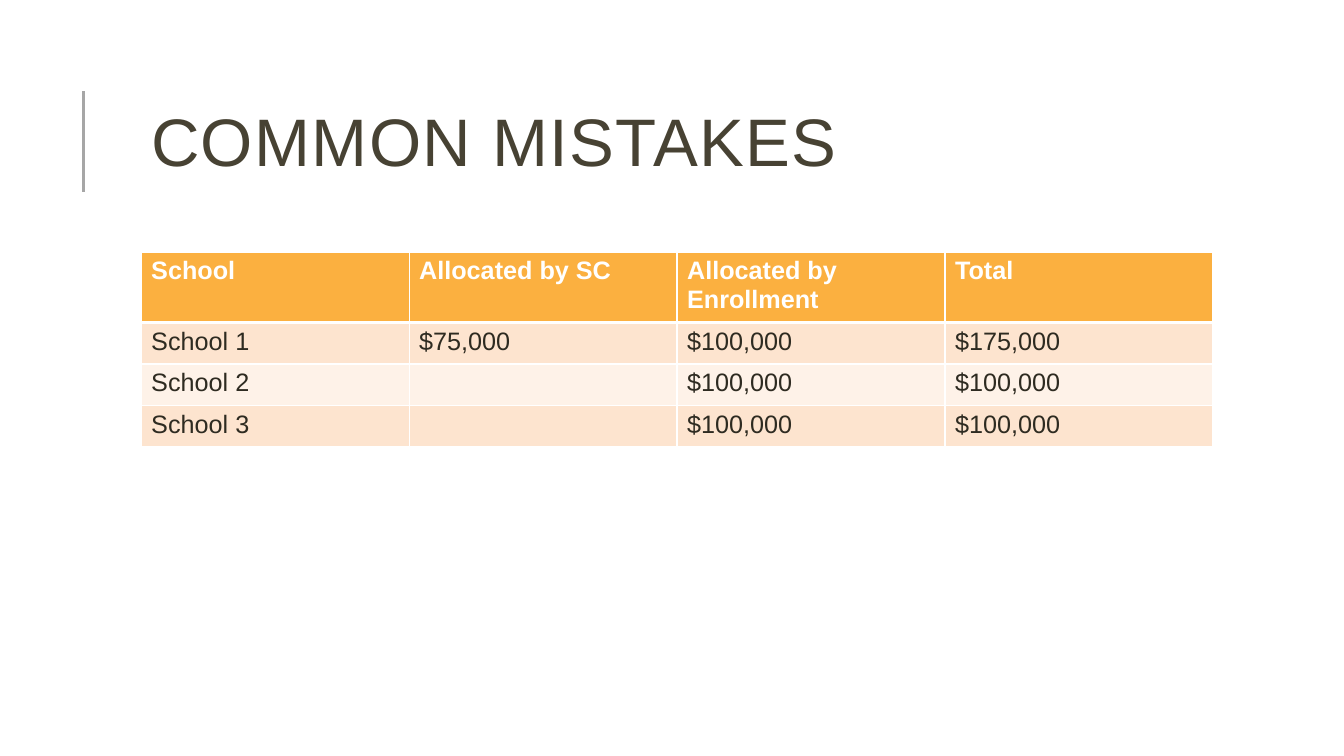
import pptx
import pptx.dml.color
import pptx.enum.shapes
import pptx.enum.text
import pptx.oxml.ns
import pptx.util
from lxml import etree
from pptx.util import Inches

ROWS = [
    ["School", "Allocated by SC", "Allocated by Enrollment", "Total"],
    ["School 1", "$75,000", "$100,000", "$175,000"],
    ["School 2", "", "$100,000", "$100,000"],
    ["School 3", "", "$100,000", "$100,000"],
]
LEFT, WIDTH = 1.4, 10.63
HEADER_HEIGHT, ROW_HEIGHT = 0.65, 0.41
HEADER_FILL = "FBB040"
BAND_FILLS = ["FEF2E8", "FDE4CF"]


def color(value):
    return pptx.dml.color.RGBColor.from_string(value)


def style_font(para, size, value, bold=False):
    para.font.name = "Arial"
    para.font.size = pptx.util.Pt(size)
    para.font.bold = bold
    para.font.color.rgb = color(value)


def add_rule(page, x, top, bottom):
    rule = page.shapes.add_connector(
        pptx.enum.shapes.MSO_CONNECTOR.STRAIGHT,
        Inches(x), Inches(bottom), Inches(x), Inches(top))
    rule.line.color.rgb = color("A6A6A6")
    rule.line.width = pptx.util.Pt(1.75)
    etree.SubElement(rule._element.spPr, pptx.oxml.ns.qn("a:effectLst"))


def add_title(page, text):
    box = page.shapes.add_textbox(Inches(LEFT), Inches(0.64), Inches(WIDTH), Inches(1.64))
    frame = box.text_frame
    frame.word_wrap = True
    frame.vertical_anchor = pptx.enum.text.MSO_ANCHOR.MIDDLE
    para = frame.paragraphs[0]
    para.line_spacing = 0.8
    span = para.add_run()
    span.text = text
    span._r.get_or_add_rPr().set("spc", "100")
    style_font(para, 48, "474233")


def add_border(cell, side, points):
    qn = pptx.oxml.ns.qn
    width = str(pptx.util.Pt(points))
    border = etree.SubElement(cell._tc.get_or_add_tcPr(), qn("a:ln" + side), w=width)
    fill = etree.SubElement(border, qn("a:solidFill"))
    etree.SubElement(fill, qn("a:srgbClr"), val="FFFFFF")


def fill_cell(cell, text, row):
    header = row == 0
    widths = {"L": 1, "R": 1, "T": 3 if row == 1 else 1, "B": 3 if header else 1}
    for side, points in widths.items():
        add_border(cell, side, points)
    cell.fill.solid()
    cell.fill.fore_color.rgb = color(HEADER_FILL if header else BAND_FILLS[row % 2])
    cell.text = text
    style_font(cell.text_frame.paragraphs[0], 18, "FFFFFF" if header else "2E2B21", header)


def add_allocations(page):
    height = HEADER_HEIGHT + ROW_HEIGHT * (len(ROWS) - 1)
    table = page.shapes.add_table(
        len(ROWS), len(ROWS[0]),
        Inches(LEFT), Inches(2.5), Inches(WIDTH), Inches(height)).table
    for row, texts in enumerate(ROWS):
        table.rows[row].height = Inches(ROW_HEIGHT if row else HEADER_HEIGHT)
        for column, text in enumerate(texts):
            fill_cell(table.cell(row, column), text, row)


def main():
    deck = pptx.Presentation()
    deck.slide_width = Inches(13.33)
    deck.slide_height = Inches(7.5)
    page = deck.slides.add_slide(deck.slide_layouts[6])
    add_rule(page, 0.83, 0.9, 1.9)
    add_title(page, "COMMON MISTAKES")
    add_allocations(page)
    deck.save("out.pptx")


if __name__ == "__main__":
    main()
